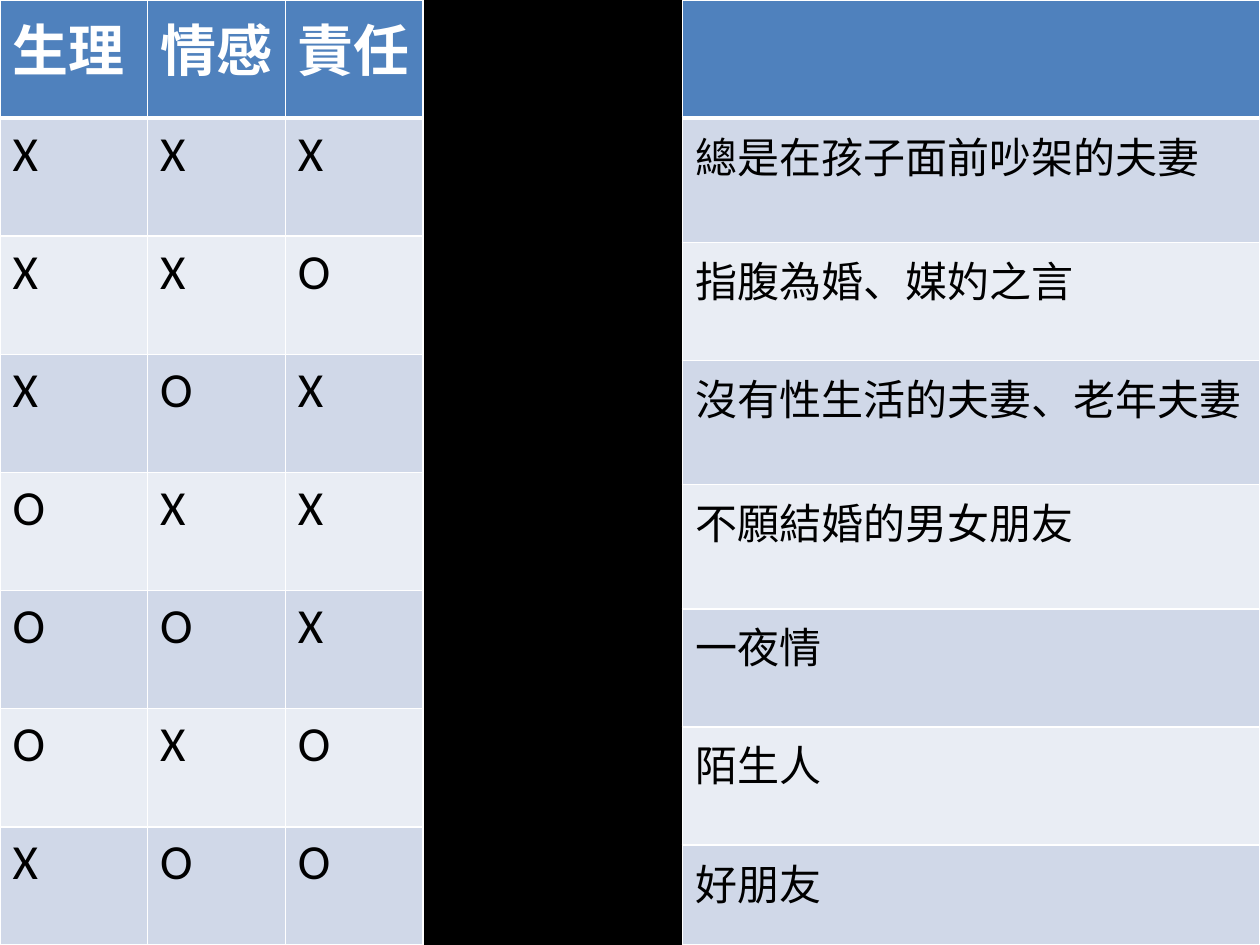
from dataclasses import dataclass

import pptx
import pptx.dml.color
import pptx.oxml
import pptx.oxml.ns
import pptx.util

Pt = pptx.util.Pt
FONT = "Calibri"
HUES = {
    "back": "000000",
    "head": "4F81BD",
    "odd": "D0D8E8",
    "even": "E9EDF4",
    "line": "FFFFFF",
    "light": "FFFFFF",
    "dark": "000000",
}


@dataclass
class Grid:
    left: float
    cols: list[float]
    rows: list[float]
    cells: list[list[str]]
    size: float  # body text size


def hue(name: str) -> pptx.dml.color.RGBColor:
    return pptx.dml.color.RGBColor.from_string(HUES[name])


def edge(cell, row: int) -> None:
    """Draw the four borders, with a thick rule under the header row."""
    props = cell._tc.get_or_add_tcPr()
    for side in "LRTB":
        thick = (row, side) in ((0, "B"), (1, "T"))
        props.append(pptx.oxml.parse_xml(
            f'<a:ln{side} {pptx.oxml.ns.nsdecls("a")} w="{Pt(3 if thick else 1)}">'
            f'<a:solidFill><a:srgbClr val="{HUES["line"]}"/></a:solidFill>'
            f'</a:ln{side}>'))


def write(cell, text: str, size: float, head: bool) -> None:
    run = cell.text_frame.paragraphs[0].add_run()
    run.text = text
    run.font.name = FONT
    run.font.size = Pt(size)
    run.font.bold = head
    run.font.color.rgb = hue("light" if head else "dark")


def draw(slide, grid: Grid) -> None:
    frame = slide.shapes.add_table(
        len(grid.rows), len(grid.cols), Pt(grid.left), Pt(0),
        Pt(sum(grid.cols)), Pt(sum(grid.rows)))
    table = frame.table
    for col, width in zip(table.columns, grid.cols):
        col.width = Pt(width)
    for row, height in zip(table.rows, grid.rows):
        row.height = Pt(height)
    for i, line in enumerate(grid.cells):
        head = i == 0
        fill = "head" if head else "odd" if i % 2 else "even"
        for j, text in enumerate(line):
            cell = table.cell(i, j)
            edge(cell, i)
            cell.fill.solid()
            cell.fill.fore_color.rgb = hue(fill)
            if text:
                write(cell, text, 32 if head else grid.size, head)


# Table contents
MARKS = ["XXX", "XXO", "XOX", "OXX", "OOX", "OXO", "XOO"]
CASES = [
    "總是在孩子面前吵架的夫妻",
    "指腹為婚、媒妁之言",
    "沒有性生活的夫妻、老年夫妻",
    "不願結婚的男女朋友",
    "一夜情",
    "陌生人",
    "好朋友",
]
GRIDS = [
    Grid(0, [84.3, 78.8, 78.8], [67.5] * 8,
         [["生理", "情感", "責任"]] + [list(mark) for mark in MARKS], 28),
    Grid(390, [330], [67.5, 71, 67.5, 71, 71, 67.5, 67.5, 57],
         [[""]] + [[case] for case in CASES], 24),
]


def main() -> None:
    # Slide and background
    deck = pptx.Presentation()
    deck.slide_width, deck.slide_height = Pt(720), Pt(540)
    slide = deck.slides.add_slide(deck.slide_layouts[6])
    slide.background.fill.solid()
    slide.background.fill.fore_color.rgb = hue("back")

    # Marks on the left, cases on the right
    for grid in GRIDS:
        draw(slide, grid)
    deck.save("out.pptx")


if __name__ == "__main__":
    main()
